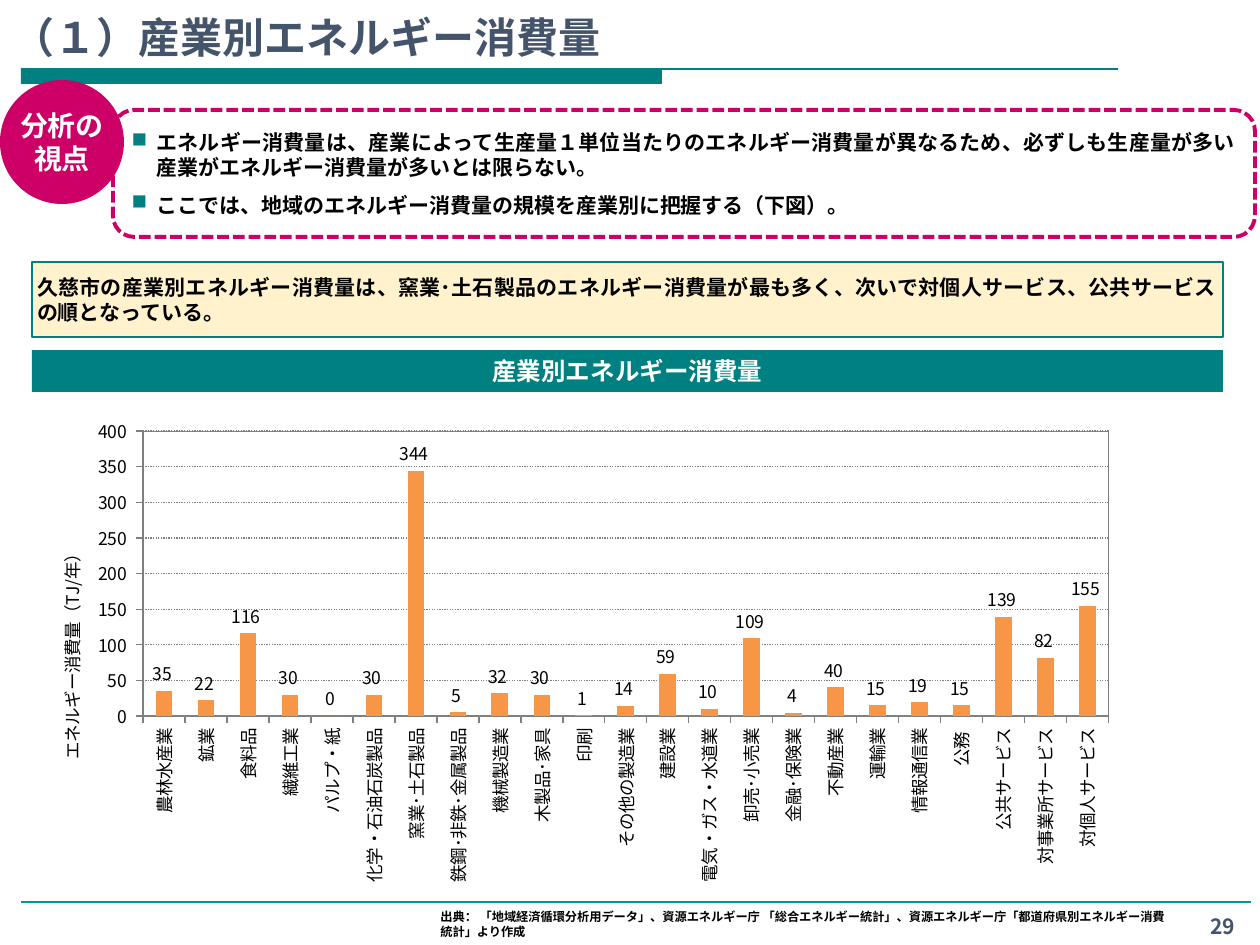
"""Builds the slide on energy consumption by industry."""
from lxml.etree import SubElement
from pptx import Presentation
from pptx.chart.data import CategoryChartData
from pptx.dml.color import RGBColor
from pptx.enum.chart import XL_CHART_TYPE as ChartType, XL_LABEL_POSITION as LabelPos
from pptx.enum.chart import XL_TICK_MARK as Tick
from pptx.enum.dml import MSO_LINE_DASH_STYLE as Dash
from pptx.enum.shapes import MSO_CONNECTOR as Connector, MSO_SHAPE as Shape
from pptx.enum.text import MSO_ANCHOR as Anchor, PP_ALIGN as Align
from pptx.oxml import parse_xml
from pptx.oxml.ns import nsdecls, qn
from pptx.util import Emu, Pt

COLORS = {"teal": "008080", "rule": "009999", "pink": "CC0066", "cream": "FFF2CC",
          "orange": "F79646", "slate": "44546A", "gray": "808080",
          "black": "000000", "white": "FFFFFF"}
FONT = "Noto Sans CJK JP"
NUMBER_FORMAT = r"#,##0_);[Red]\(#,##0\)"
CONSUMPTION = {
    "農林水産業": 35, "鉱業": 22, "食料品": 116, "繊維工業": 30, "パルプ・紙": 0,
    "化学・石油石炭製品": 30, "窯業･土石製品": 344, "鉄鋼･非鉄･金属製品": 5,
    "機械製造業": 32, "木製品･家具": 30, "印刷": 1, "その他の製造業": 14,
    "建設業": 59, "電気・ガス・水道業": 10, "卸売･小売業": 109, "金融･保険業": 4,
    "不動産業": 40, "運輸業": 15, "情報通信業": 19, "公務 ": 15,
    "公共サービス": 139, "対事業所サービス": 82, "対個人サービス": 155,
}


def px(*lengths):
    return [Emu(round(length * 9144000 / 1260)) for length in lengths]


def rgb(name):
    return RGBColor.from_string(COLORS[name])


def apply(target, values):
    for name, value in values.items():
        setattr(target, name, value)


class SlideBuilder:
    """Holds the text style and the current slide."""

    def __init__(self, page, font):
        self.page = page
        self.font = font

    def style_font(self, font, size, color, bold=True):
        apply(font, {"name": self.font, "size": Pt(size), "bold": bold})
        font.color.rgb = rgb(color)

    def style_line(self, line, color, width, dash=None):
        line.color.rgb = rgb(color)
        line.width = Pt(width)
        if dash:
            line.dash_style = dash

    def fill_text(self, box, texts, size, color, align=Align.LEFT, anchor=Anchor.TOP,
                  inset=None, wrap=True, bullet=None):
        frame = box.text_frame
        apply(frame, {"word_wrap": wrap, "vertical_anchor": anchor})
        if inset:
            side, edge = px(*inset)
            apply(frame, {"margin_left": side, "margin_right": side,
                          "margin_top": edge, "margin_bottom": edge})
        for index, text in enumerate(texts):
            para = frame.add_paragraph() if index else frame.paragraphs[0]
            para.text = text
            para.alignment = align
            if bullet:
                self.add_bullet(para, bullet)
                apply(para, {"space_before": Pt(3 if index else 0), "space_after": Pt(4)})
            for span in para.runs:
                self.style_font(span.font, size, color)
                SubElement(span.font._element, qn("a:ea")).set("typeface", self.font)

    def add_bullet(self, para, color):
        props = para._p.get_or_add_pPr()
        indent = px(25)[0]
        props.set("marL", str(indent))
        props.set("indent", str(-indent))
        tint = SubElement(props, qn("a:buClr"))
        SubElement(tint, qn("a:srgbClr")).set("val", COLORS[color])
        SubElement(props, qn("a:buChar")).set("char", "■")

    def text(self, place, texts, size, color, **layout):
        box = self.page.shapes.add_textbox(*px(*place))
        self.fill_text(box, texts, size, color, **layout)

    def shape(self, kind, place, fill=None, line=None):
        shape = self.page.shapes.add_shape(kind, *px(*place))
        shape.shadow.inherit = False
        if fill:
            shape.fill.solid()
            shape.fill.fore_color.rgb = rgb(fill)
        else:
            shape.fill.background()
        if line:
            self.style_line(shape.line, *line)
        else:
            shape.line.fill.background()
        return shape

    def rule(self, left, right, y, color):
        rule = self.page.shapes.add_connector(Connector.STRAIGHT, *px(left, y, right, y))
        self.style_line(rule.line, color, 0.75)
        SubElement(rule._element.spPr, qn("a:effectLst"))

    def place_part(self, part, position, **fractions):
        for old in part.findall(qn("c:layout")):
            part.remove(old)
        modes = "".join(f'<c:{axis}Mode val="edge"/>' for axis in "xy")
        target = '<c:layoutTarget val="inner"/>' if "w" in fractions else ""
        sizes = "".join(f'<c:{key} val="{value}"/>' for key, value in fractions.items())
        part.insert(position, parse_xml(
            f'<c:layout {nsdecls("c")}><c:manualLayout>{target}{modes}{sizes}'
            '</c:manualLayout></c:layout>'))

    def turn_up(self, body):
        body.set("rot", "-5400000")
        body.set("vert", "horz")

    def column_chart(self, place, values, axis_title, color):
        data = CategoryChartData(number_format=NUMBER_FORMAT)
        data.categories = list(values)
        data.add_series("Series 1", list(values.values()))
        chart = self.page.shapes.add_chart(
            ChartType.COLUMN_CLUSTERED, *px(*place), data).chart
        apply(chart, {"has_legend": False, "has_title": False})
        self.style_font(chart.font, 10, "black", False)
        SubElement(chart.font._element, qn("a:ea")).set("typeface", self.font)

        plot = chart.plots[0]
        apply(plot, {"gap_width": 150, "vary_by_categories": False, "has_data_labels": True})
        apply(plot.data_labels, {"show_value": True, "number_format": NUMBER_FORMAT,
                                 "number_format_is_linked": False,
                                 "position": LabelPos.OUTSIDE_END})
        fill = plot.series[0].format.fill
        fill.solid()
        fill.fore_color.rgb = rgb(color)

        for axis in (chart.category_axis, chart.value_axis):
            apply(axis, {"major_tick_mark": Tick.OUTSIDE, "minor_tick_mark": Tick.NONE})
            self.style_font(axis.tick_labels.font, 10, "black", False)
            self.style_line(axis.format.line, "gray", 0.75)
        self.turn_up(chart.category_axis._element.find(qn("c:txPr")).find(qn("a:bodyPr")))
        axis = chart.value_axis
        apply(axis, {"minimum_scale": 0, "maximum_scale": 400, "major_unit": 50,
                     "has_major_gridlines": True})
        apply(axis.tick_labels, {"number_format": NUMBER_FORMAT,
                                 "number_format_is_linked": False})
        self.style_line(axis.major_gridlines.format.line, "gray", 0.75, Dash.ROUND_DOT)

        frame = axis.axis_title.text_frame
        frame.text = axis_title
        self.style_font(frame.paragraphs[0].runs[0].font, 10, "black", False)
        self.turn_up(frame._txBody.find(qn("a:bodyPr")))
        self.place_part(axis.axis_title._element, 1, x=0.03, y=0.28)

        area = chart._chartSpace.chart.plotArea
        self.place_part(area, 0, x=0.11, y=0.05, w=0.87, h=0.59)
        area.append(parse_xml(
            f'<c:spPr {nsdecls("c", "a")}><a:noFill/><a:ln w="9525"><a:solidFill>'
            f'<a:srgbClr val="{COLORS["gray"]}"/></a:solidFill></a:ln></c:spPr>'))


def main():
    deck = Presentation()
    deck.slide_width, deck.slide_height = px(1260, 945)
    slide = SlideBuilder(deck.slides.add_slide(deck.slide_layouts[6]), FONT)

    slide.shape(Shape.RECTANGLE, (21, 69, 641, 15), "teal")
    slide.rule(21, 1118, 69, "teal")
    slide.rule(21, 1251, 902, "rule")
    slide.column_chart((21, 407, 1110, 483), CONSUMPTION, "エネルギー消費量（TJ/年）", "orange")
    slide.text((0, 0, 1095, 68), ["（１）産業別エネルギー消費量"], 24, "slate", anchor=Anchor.BOTTOM)
    slide.text((428, 903, 760, 28), [
        "出典： 「地域経済循環分析用データ」、資源エネルギー庁 「総合エネルギー統計」、"
        "資源エネルギー庁「都道府県別エネルギー消費統計」より作成"], 7, "black")

    summary = slide.shape(Shape.RECTANGLE, (32, 262, 1191, 75), "cream", ("teal", 1))
    slide.fill_text(summary, [
        "久慈市の産業別エネルギー消費量は、窯業･土石製品のエネルギー消費量が最も多く、"
        "次いで対個人サービス、公共サービスの順となっている。"],
        12, "black", Align.JUSTIFY, Anchor.MIDDLE, inset=(5, 6))
    banner = slide.shape(Shape.RECTANGLE, (32, 350, 1191, 42), "teal")
    slide.fill_text(banner, ["産業別エネルギー消費量"], 14, "white", Align.CENTER, Anchor.MIDDLE)
    slide.text((1186, 907, 74, 35), ["29"], 12, "slate", align=Align.CENTER)

    viewpoint = slide.shape(Shape.ROUNDED_RECTANGLE, (113, 110, 1142, 127),
                            line=("pink", 2.25, Dash.SQUARE_DOT))
    slide.fill_text(viewpoint, [
        "エネルギー消費量は、産業によって生産量１単位当たりのエネルギー消費量が異なるため、"
        "必ずしも生産量が多い産業がエネルギー消費量が多いとは限らない。",
        "ここでは、地域のエネルギー消費量の規模を産業別に把握する（下図）。"],
        12, "black", Align.JUSTIFY, Anchor.MIDDLE, bullet="teal")
    badge = slide.shape(Shape.OVAL, (0, 80, 124, 124), "pink")
    slide.fill_text(badge, ["分析の\v視点"], 16, "white", Align.CENTER, Anchor.MIDDLE,
                    inset=(5, 6), wrap=False)

    deck.save("out.pptx")


if __name__ == "__main__":
    main()
